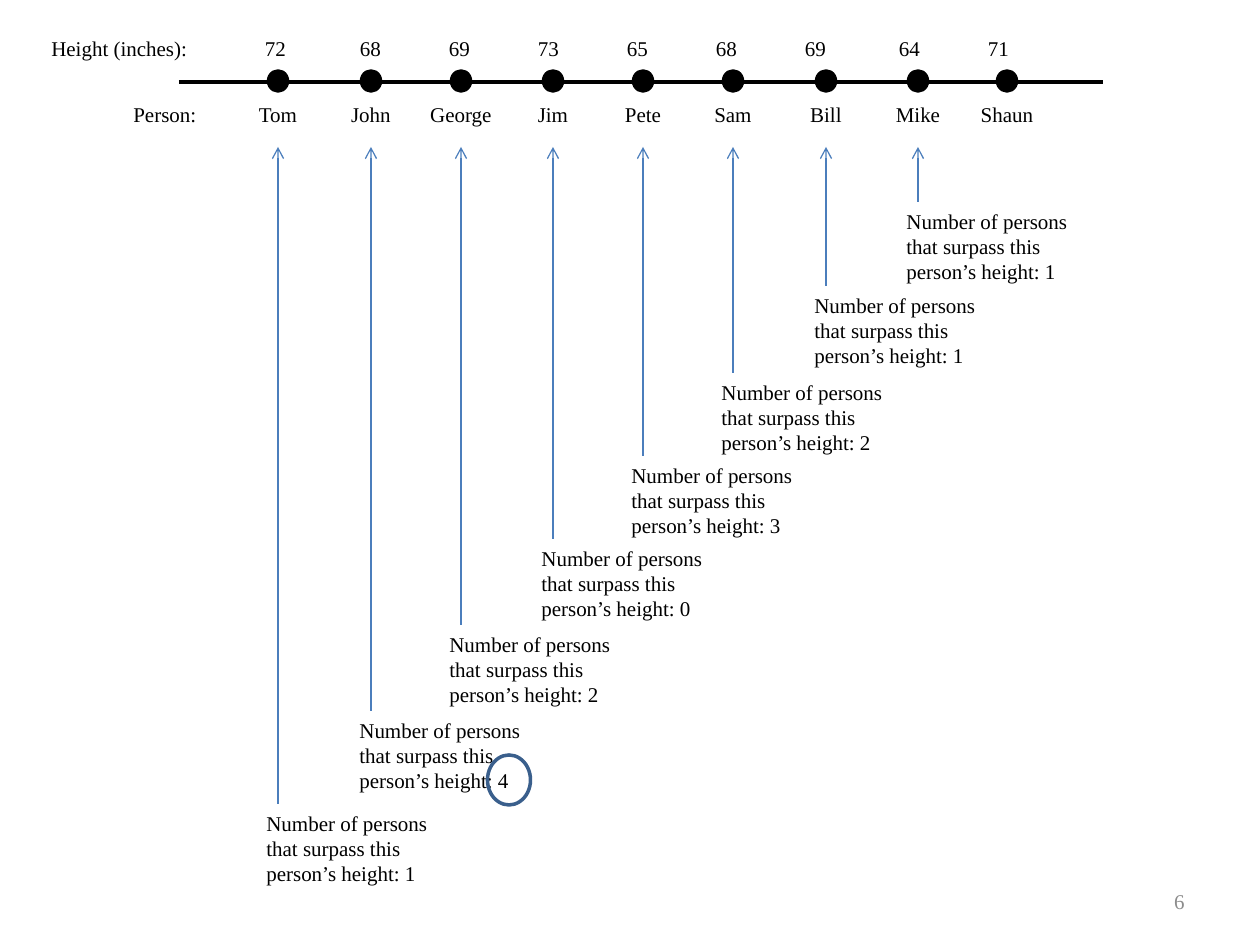
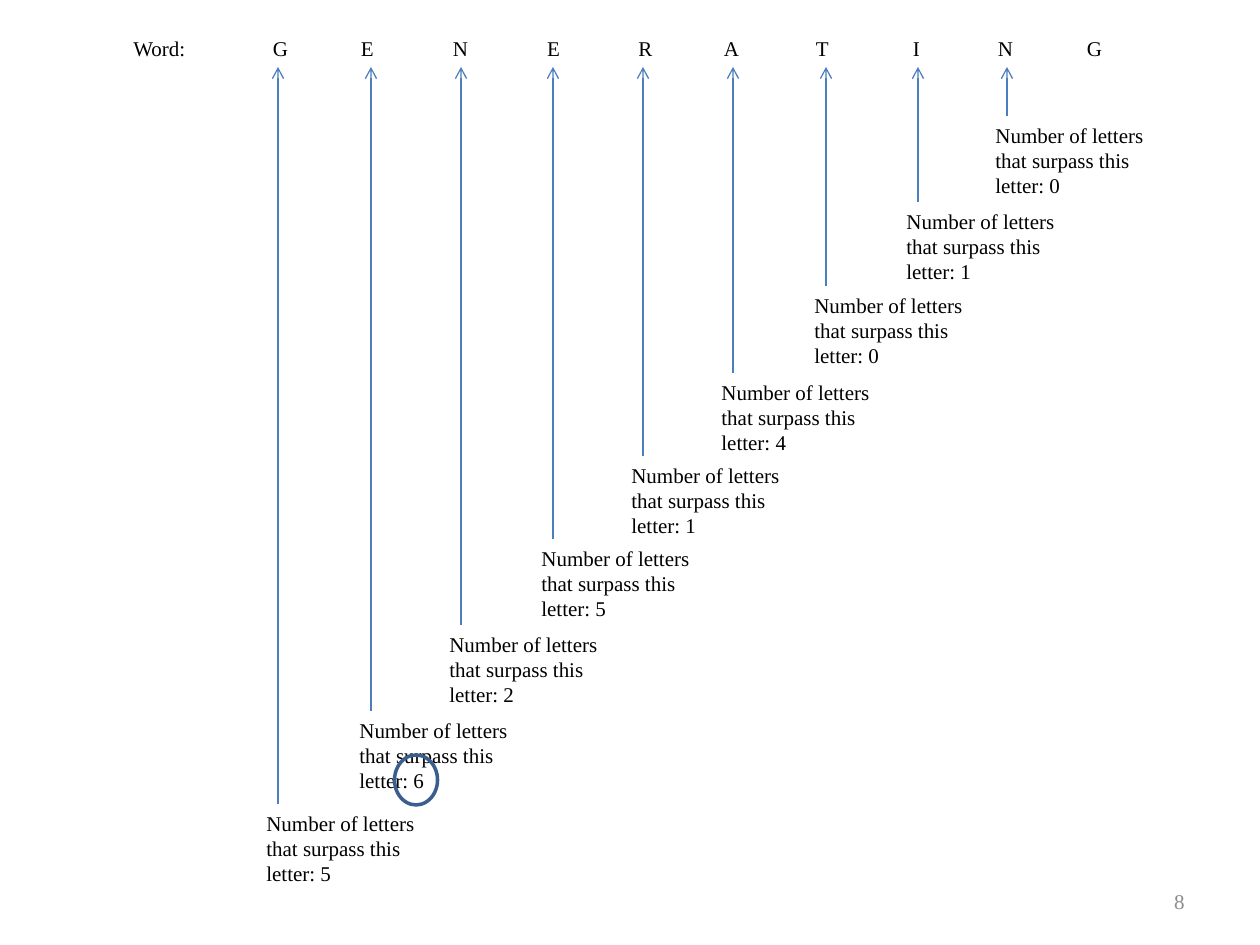
from lxml.etree import SubElement
from pptx import Presentation
from pptx.dml.color import RGBColor
from pptx.enum.shapes import MSO_CONNECTOR as Connector, MSO_SHAPE as Preset
from pptx.enum.text import MSO_ANCHOR as Anchor, MSO_AUTO_SIZE as AutoSize, PP_ALIGN as Align
from pptx.oxml.ns import qn
from pptx.util import Pt

EMU_PER_PX = 914400 / 126
FONT = "Times New Roman"
COLORS = {
    "ink": "000000",
    "arrow": "4B7EBC",
    "ring": "3A5F8C",
    "page": "8C8C8C",
}
INSET = 13
LABEL_HEIGHT = 38
HEADER_TOP = 29
PERSON_TOP = 95
NAME_WIDTH = 88
NOTE_HEIGHT = 89
NOTE_OFFSET = 24
COLUMNS = [278, 371, 461, 553, 643, 733, 826, 918, 1007]
NOTE_TOPS = [804, 711, 625, 539, 456, 373, 286, 202, 116]


def px(length):
    return round(length * EMU_PER_PX)


def color(name):
    return RGBColor.from_string(COLORS[name])


def add_label(slide, text, left, top, width, height=LABEL_HEIGHT,
              align=Align.LEFT, ink="ink", wrap=False):
    label = slide.shapes.add_textbox(px(left), px(top), px(width), px(height))
    frame = label.text_frame
    frame.text = text
    frame.word_wrap = wrap
    frame.auto_size = AutoSize.SHAPE_TO_FIT_TEXT
    paragraph = frame.paragraphs[0]
    paragraph.alignment = align
    for run in paragraph.runs:
        run.font.name = FONT
        run.font.size = Pt(12)
        run.font.color.rgb = color(ink)
    return frame


def add_header(slide, heading, left, entries, centers):
    frame = add_label(slide, "\t".join([heading, *entries]), left, HEADER_TOP,
                      1120 - left, wrap=True)
    properties = frame.paragraphs[0]._p.get_or_add_pPr()
    tabs = SubElement(properties, qn("a:tabLst"))
    for center in centers:
        SubElement(tabs, qn("a:tab"), pos=str(px(center - left - INSET)), algn="ctr")


def add_line(slide, start, end, ink, weight):
    line = slide.shapes.add_connector(Connector.STRAIGHT, *map(px, start + end))
    line.line.color.rgb = color(ink)
    line.line.width = Pt(weight)
    SubElement(line._element.spPr, qn("a:effectLst"))
    return line


def add_arrow(slide, start, end):
    arrow = add_line(slide, start, end, "arrow", 0.75)
    SubElement(arrow.line._get_or_add_ln(), qn("a:tailEnd"), type="arrow")


def add_ellipse(slide, center, width, height, ink, filled):
    x, y = center
    ellipse = slide.shapes.add_shape(Preset.OVAL, px(x - width / 2), px(y - height / 2),
                                     px(width), px(height))
    ellipse.shadow.inherit = False
    ellipse.line.color.rgb = color(ink)
    ellipse.line.width = Pt(2)
    if filled:
        ellipse.fill.solid()
        ellipse.fill.fore_color.rgb = color(ink)
    else:
        ellipse.fill.background()


def add_staircase(slide, sentence, counts, arrow_tip, note_width):
    for column, top, count in zip(COLUMNS, NOTE_TOPS, counts):
        add_arrow(slide, (column, top), (column, arrow_tip))
        add_label(slide, f"{sentence}: {count}", column - NOTE_OFFSET, top,
                  note_width, NOTE_HEIGHT, wrap=True)


def add_maximum_ring(slide, x):
    add_ellipse(slide, (x, 780), 43, 50, "ring", False)


def add_page_number(slide, number):
    frame = add_label(slide, number, 903, 876, 294, 50, Align.RIGHT, "page", True)
    frame.auto_size = AutoSize.NONE
    frame.vertical_anchor = Anchor.MIDDLE


def add_timeline(slide, people):
    add_line(slide, (179, 82), (1103, 82), "ink", 2)
    for column, person in zip(COLUMNS, people):
        add_ellipse(slide, (column, 81), 19, 20, "ink", True)
        add_label(slide, person, column - NAME_WIDTH / 2, PERSON_TOP, NAME_WIDTH,
                  align=Align.CENTER)
    add_label(slide, "Person:", 121, PERSON_TOP, 89)


def build_heights(slide):
    add_page_number(slide, "6")
    add_timeline(slide, ["Tom", "John", "George", "Jim", "Pete",
                         "Sam", "Bill", "Mike", "Shaun"])
    add_header(slide, "Height (inches):", 39,
               ["72", "68", "69", "73", "65", "68", "69", "64", "71"],
               [276, 371, 460, 549, 638, 727, 816, 910, 999])
    add_staircase(slide, "Number of persons that surpass this person’s height",
                  [1, 4, 2, 0, 3, 2, 1, 1], 147, 198)
    add_maximum_ring(slide, 509)


def build_letters(slide):
    add_page_number(slide, "8")
    add_header(slide, "Word:", 121, "GENERATING",
               [281, 368, 461, 554, 646, 732, 823, 917, 1006, 1095])
    add_staircase(slide, "Number of letters that surpass this letter",
                  [5, 6, 2, 5, 1, 4, 0, 1, 0], 67, 183)
    add_maximum_ring(slide, 416)


def main():
    deck = Presentation()
    deck.slide_width, deck.slide_height = px(1260), px(945)
    blank = deck.slide_layouts[6]
    for build in (build_heights, build_letters):
        build(deck.slides.add_slide(blank))
    deck.save("out.pptx")


if __name__ == "__main__":
    main()
